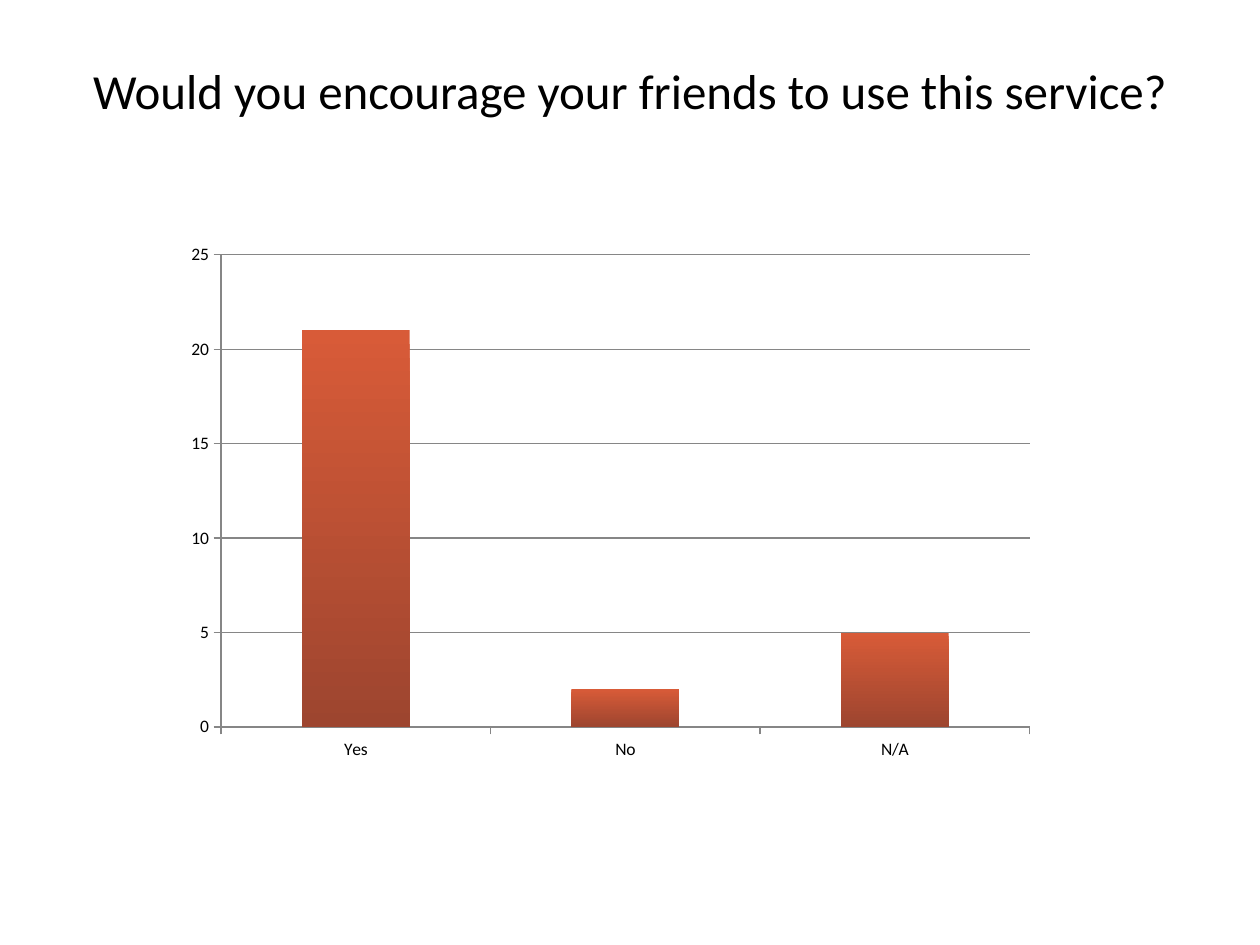
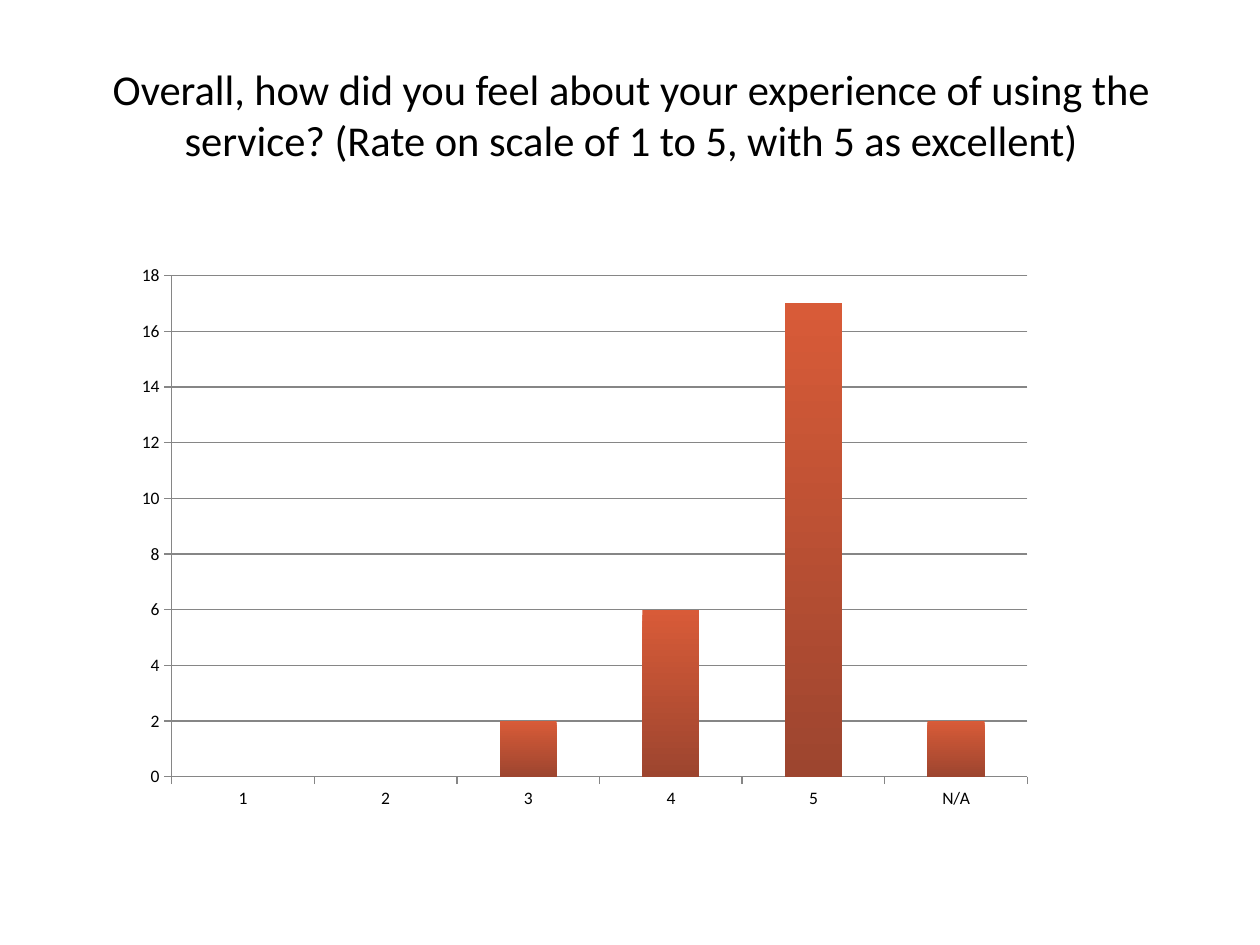
"""Builds two survey result slides, each with a question and a column chart."""
import pptx
import pptx.chart.data
import pptx.dml.color
import pptx.enum.chart
import pptx.enum.text
import pptx.util
from pptx.util import Inches, Pt

FONT = "Calibri"
TEXT_COLOR = "000000"
AXIS_COLOR = "868686"
BAR_COLORS = ("D85B38", "9D452F")
TITLE_WIDTH, TITLE_HEIGHT = 9, 1.25

QUESTIONS = [
    {
        "title": "Would you encourage your friends to use this service?",
        "title_size": 28,
        "title_at": (0.5, 0.3),
        "title_inset": 0.18,
        "chart_at": (1.38, 1.86, 6.93, 4.25),
        "answers": {"Yes": 21, "No": 2, "N/A": 5},
        "axis_maximum": 25,
        "axis_step": 5,
    },
    {
        "title": "Overall, how did you feel about your experience of using the "
                 "service? (Rate on scale of 1 to 5, with 5 as excellent)",
        "title_size": 24.3,
        "title_at": (0.51, 0.5),
        "title_inset": 0,
        "chart_at": (0.98, 2.02, 7.32, 4.49),
        "answers": {"1": 0, "2": 0, "3": 2, "4": 6, "5": 17, "N/A": 2},
        "axis_maximum": 18,
        "axis_step": 2,
    },
]


def color(hex_string):
    return pptx.dml.color.RGBColor.from_string(hex_string)


def style_font(font, size):
    font.name = FONT
    font.size = Pt(size)
    font.color.rgb = color(TEXT_COLOR)


def style_line(line):
    line.color.rgb = color(AXIS_COLOR)
    line.width = Pt(0.75)


def add_title(slide, question):
    left, top = question["title_at"]
    box = slide.shapes.add_textbox(
        Inches(left), Inches(top), Inches(TITLE_WIDTH), Inches(TITLE_HEIGHT))
    frame = box.text_frame
    frame.word_wrap = True
    frame.vertical_anchor = pptx.enum.text.MSO_ANCHOR.TOP
    frame.margin_top = Inches(question["title_inset"])
    paragraph = frame.paragraphs[0]
    paragraph.text = question["title"]
    paragraph.alignment = pptx.enum.text.PP_ALIGN.CENTER
    style_font(paragraph.font, question["title_size"])


def add_answer_chart(slide, question):
    data = pptx.chart.data.CategoryChartData()
    data.categories = list(question["answers"])
    data.add_series("Series 1", list(question["answers"].values()))
    chart = slide.shapes.add_chart(
        pptx.enum.chart.XL_CHART_TYPE.COLUMN_CLUSTERED,
        *map(Inches, question["chart_at"]), data).chart
    chart.has_legend = False
    chart.has_title = False
    style_font(chart.font, 10)

    for axis in (chart.category_axis, chart.value_axis):
        axis.major_tick_mark = pptx.enum.chart.XL_TICK_MARK.OUTSIDE
        axis.minor_tick_mark = pptx.enum.chart.XL_TICK_MARK.NONE
        style_line(axis.format.line)
    chart.value_axis.minimum_scale = 0
    chart.value_axis.maximum_scale = question["axis_maximum"]
    chart.value_axis.major_unit = question["axis_step"]
    chart.value_axis.has_major_gridlines = True
    style_line(chart.value_axis.major_gridlines.format.line)

    plot = chart.plots[0]
    plot.gap_width = 150
    plot.vary_by_categories = False
    fill = plot.series[0].format.fill
    fill.gradient()
    fill.gradient_angle = 270
    for stop, bar_color in zip(fill.gradient_stops, BAR_COLORS):
        stop.color.rgb = color(bar_color)


def main():
    presentation = pptx.Presentation()
    presentation.slide_width = Inches(10)
    presentation.slide_height = Inches(7.5)
    for question in QUESTIONS:
        slide = presentation.slides.add_slide(presentation.slide_layouts[6])
        add_title(slide, question)
        add_answer_chart(slide, question)
    presentation.save("out.pptx")


if __name__ == "__main__":
    main()
